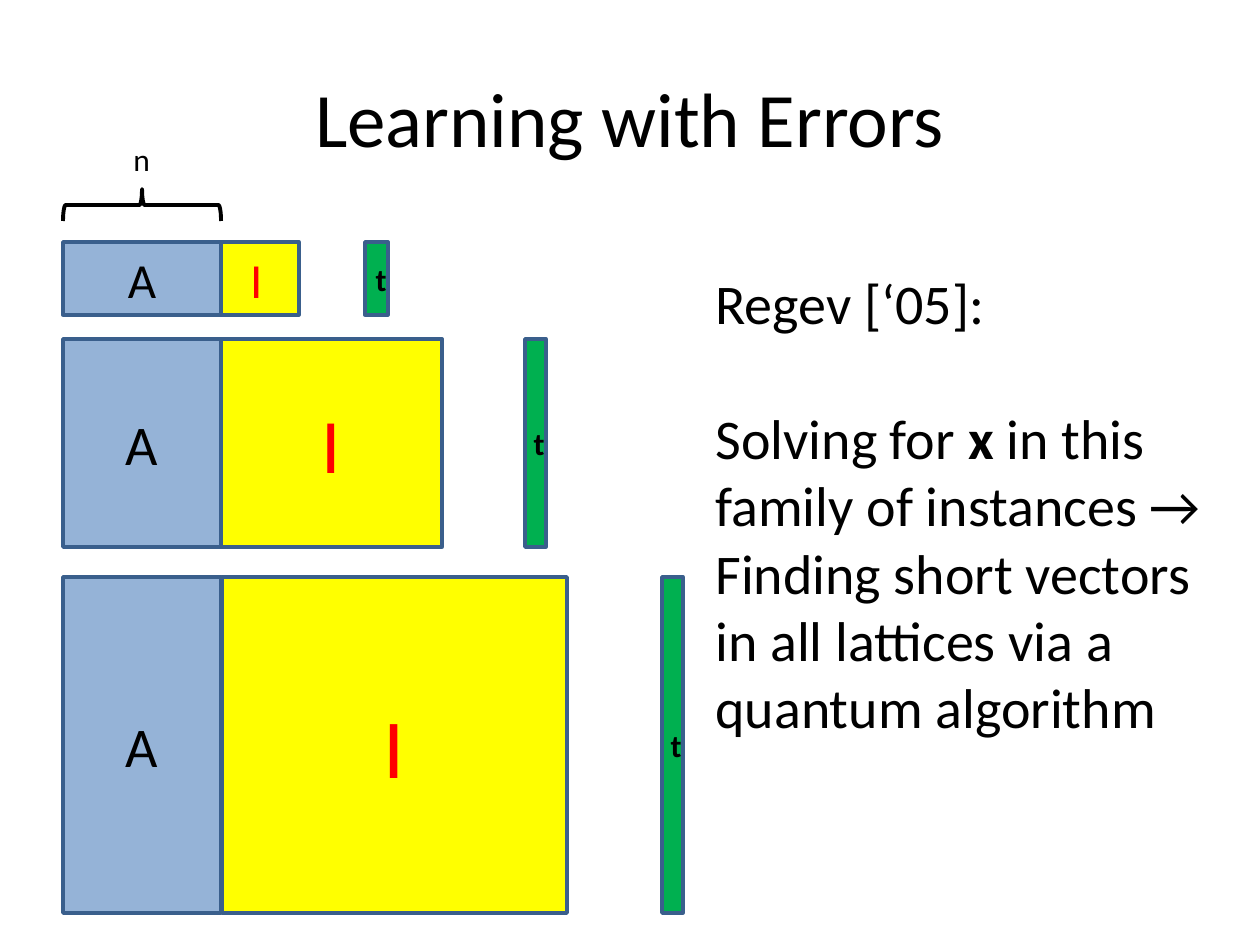
from dataclasses import dataclass

from pptx import Presentation
from pptx.dml.color import RGBColor
from pptx.enum.shapes import MSO_SHAPE as Shape
from pptx.enum.text import MSO_ANCHOR as Anchor, MSO_AUTO_SIZE as AutoSize, PP_ALIGN as Align
from pptx.util import Emu, Pt

PX_PER_INCH = 126
FONT = "Calibri"
BLACK, RED = "000000", "FF0000"
BLUE, YELLOW, GREEN, OUTLINE = "95B3D7", "FFFF00", "00B050", "3A5F8C"


@dataclass(frozen=True)
class Instance:
    """One row: the blocks A and I side by side, then the narrow vector t."""
    top: int
    height: int
    a_size: int
    i_left: int
    i_width: int
    i_size: int
    t_left: int
    t_width: int
    i_suffix: str = ""


A_LEFT, A_WIDTH = 63, 158
INSTANCES = [
    Instance(242, 73, 28, 221, 78, 28, 365, 23, i_suffix=" "),
    Instance(339, 208, 32, 221, 221, 44, 525, 21),
    Instance(577, 336, 32, 222, 345, 48, 662, 21),
]


def px(length: int) -> Emu:
    return Emu(round(length * 914400 / PX_PER_INCH))


def color(value: str) -> RGBColor:
    return RGBColor.from_string(value)


def write(para, text: str, *, size: int, ink: str = BLACK, bold: bool = False,
          align=None) -> None:
    """Add one formatted span to a paragraph."""
    if align is not None:
        para.alignment = align
    span = para.add_run()
    span.text = text
    font = span.font
    font.name, font.size, font.bold = FONT, Pt(size), bold
    font.color.rgb = color(ink)


def add_block(page, left: int, top: int, width: int, height: int, fill: str,
              label: str, **text_format):
    """Draw an outlined rectangle with a centred label."""
    block = page.shapes.add_shape(Shape.RECTANGLE, px(left), px(top), px(width), px(height))
    block.shadow.inherit = False
    block.fill.solid()
    block.fill.fore_color.rgb = color(fill)
    block.line.color.rgb = color(OUTLINE)
    block.line.width = Pt(2)
    block.text_frame.vertical_anchor = Anchor.MIDDLE
    para = block.text_frame.paragraphs[0]
    write(para, label, align=Align.CENTER, **text_format)
    return para


def add_instance(page, row: Instance) -> None:
    add_block(page, A_LEFT, row.top, A_WIDTH, row.height, BLUE, "A", size=row.a_size)
    para = add_block(page, row.i_left, row.top, row.i_width, row.height, YELLOW, "I",
                     size=row.i_size, ink=RED)
    if row.i_suffix:
        write(para, row.i_suffix, size=18, ink=RED)
    add_block(page, row.t_left, row.top, row.t_width, row.height, GREEN, "t",
              size=18, bold=True)


def add_text_box(page, left: int, top: int, width: int, height: int, wrap: bool):
    box = page.shapes.add_textbox(px(left), px(top), px(width), px(height))
    box.text_frame.word_wrap = wrap
    box.text_frame.auto_size = AutoSize.SHAPE_TO_FIT_TEXT
    return box.text_frame


def main() -> None:
    deck = Presentation()
    deck.slide_width, deck.slide_height = px(1260), px(945)
    page = deck.slides.add_slide(deck.slide_layouts[5])

    # Title
    title = page.shapes.title
    title.left, title.top, title.width, title.height = px(63), px(38), px(1134), px(158)
    title.text_frame.vertical_anchor = Anchor.MIDDLE
    write(title.text_frame.paragraphs[0], "Learning with Errors", size=44, align=Align.CENTER)

    # Growing instances
    for row in INSTANCES:
        add_instance(page, row)

    # Brace over the width of A, with its label
    brace = page.shapes.add_shape(Shape.LEFT_BRACE, px(126), px(126), px(32), px(A_WIDTH))
    brace.rotation = 90
    brace.shadow.inherit = False
    brace.fill.background()
    brace.line.color.rgb = color(BLACK)
    brace.line.width = Pt(2.25)
    label = add_text_box(page, 121, 134, 42, 53, wrap=False)
    write(label.paragraphs[0], "n", size=18)

    # Hardness result
    result = add_text_box(page, 703, 262, 536, 488, wrap=True)
    write(result.paragraphs[0], "Regev [‘05]:", size=32)
    claim = result.add_paragraph()
    claim.space_before = Pt(39)
    write(claim, "Solving for ", size=32)
    write(claim, "x", size=32, bold=True)
    write(claim, " in this family of instances → Finding short vectors in all lattices "
                 "via a quantum algorithm", size=32)

    deck.save("out.pptx")


if __name__ == "__main__":
    main()
